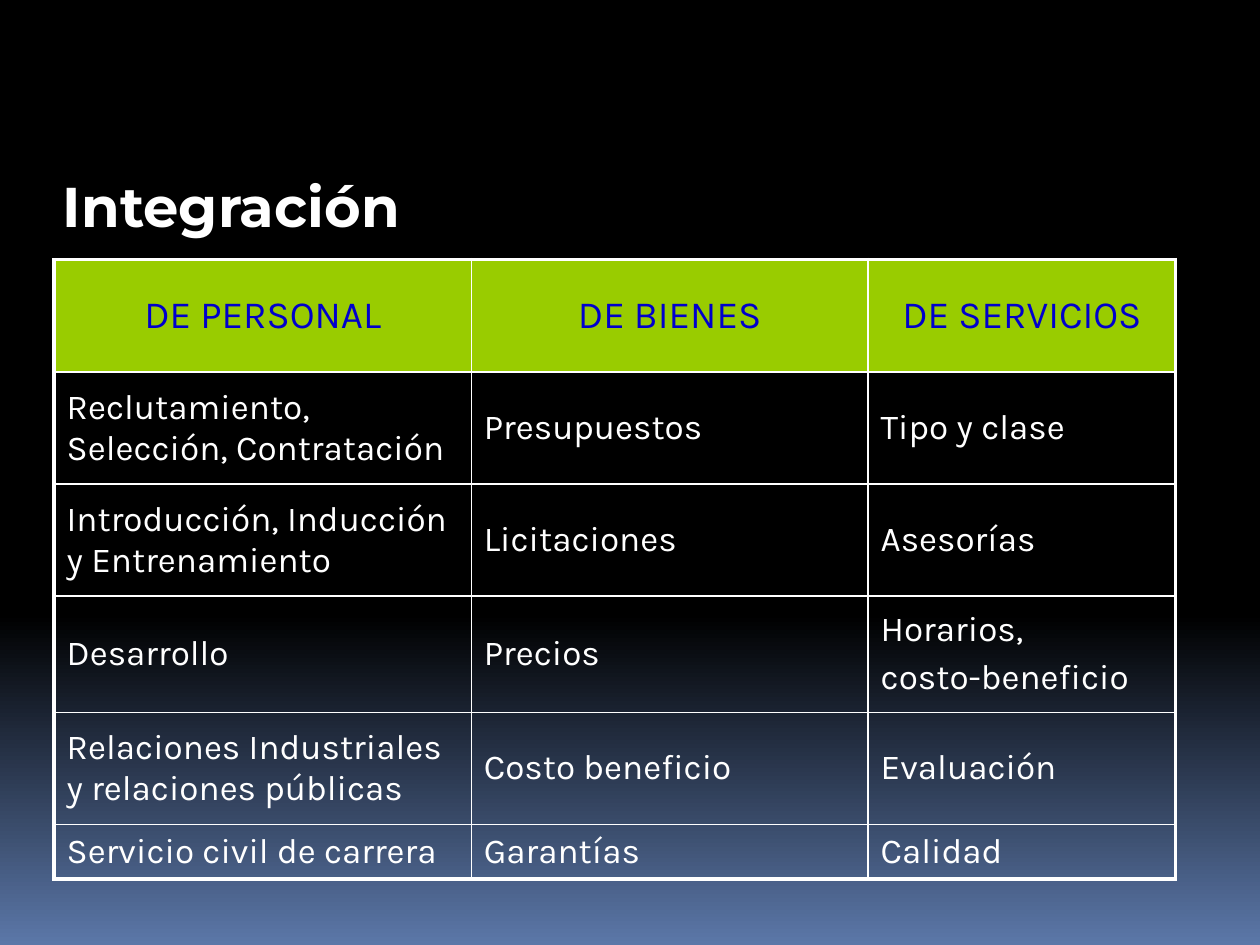
from typing import NamedTuple

from lxml import etree
from pptx import Presentation
from pptx import util as u
from pptx.dml.color import RGBColor
from pptx.enum import text
from pptx.oxml import ns

HUES = {"white": "FFFFFF", "black": "000000", "sky": "5B77A8",
        "lime": "99CC00", "blue": "0000CC"}
THIN, THICK = 1, 2.25
COLS = (8.41, 8, 6.2)
ROWS = (2.27, 2.26, 2.26, 2.34, 2.26, 1.09)
GRID = (
    ("DE PERSONAL", "DE BIENES", "DE SERVICIOS"),
    ("Reclutamiento, Selección, Contratación", "Presupuestos", "Tipo y clase"),
    ("Introducción, Inducción y Entrenamiento", "Licitaciones", "Asesorías"),
    ("Desarrollo", "Precios", "Horarios,\ncosto-beneficio"),
    ("Relaciones Industriales y relaciones públicas", "Costo beneficio",
     "Evaluación"),
    ("Servicio civil de carrera", "Garantías", "Calidad"),
)


class Style(NamedTuple):
    font: dict
    hue: str
    align: text.PP_ALIGN = text.PP_ALIGN.LEFT


TITLE = Style({"name": "Montserrat", "size": u.Pt(32), "bold": True}, "white")
HEAD = Style({"name": "Karla", "size": u.Pt(22), "bold": False}, "blue",
             text.PP_ALIGN.CENTER)
BODY = Style({"name": "Karla", "size": u.Pt(20), "bold": False}, "white")


def rgb(hue: str) -> RGBColor:
    return RGBColor.from_string(HUES[hue])


def write(frame, words: str, style: Style) -> None:
    frame.word_wrap = True
    frame.text = words
    for i, para in enumerate(frame.paragraphs):
        para.alignment = style.align
        if i:
            para.space_before = u.Pt(4)
        font = para.runs[0].font
        for key, value in style.font.items():
            setattr(font, key, value)
        font.color.rgb = rgb(style.hue)


def edge(cell, side: str, width: float) -> None:
    """Add a white border; the sides must come in the order L, R, T, B."""
    props = cell._tc.get_or_add_tcPr()
    line = etree.SubElement(props, ns.qn(f"a:ln{side}"), w=str(u.Pt(width)))
    fill = etree.SubElement(line, ns.qn("a:solidFill"))
    etree.SubElement(fill, ns.qn("a:srgbClr"), val=HUES["white"])


def paint(slide) -> None:
    """Keep the top of the slide black and fade to blue below."""
    fill = slide.background.fill
    fill.gradient()
    fill.gradient_angle = 270
    for stop, (place, hue) in zip(fill.gradient_stops,
                                  ((0.65, "black"), (1, "sky"))):
        stop.position = place
        stop.color.rgb = rgb(hue)


def draw_table(slide) -> None:
    table = slide.shapes.add_table(
        len(ROWS), len(COLS), u.Cm(1.09), u.Cm(5.23),
        u.Cm(sum(COLS)), u.Cm(sum(ROWS))).table
    table.horz_banding = table.first_row = False
    for col, width in zip(table.columns, COLS):
        col.width = u.Cm(width)
    for row, height in zip(table.rows, ROWS):
        row.height = u.Cm(height)
    for r, line in enumerate(GRID):
        for c, words in enumerate(line):
            cell = table.cell(r, c)
            outer = {"L": c == 0, "R": c == len(COLS) - 1,
                     "T": r == 0, "B": r == len(ROWS) - 1}
            for side, thick in outer.items():
                edge(cell, side, THICK if thick else THIN)
            if r == 0:
                cell.fill.solid()
                cell.fill.fore_color.rgb = rgb("lime")
            else:
                cell.fill.background()
            cell.vertical_anchor = text.MSO_ANCHOR.MIDDLE
            write(cell.text_frame, words, BODY if r else HEAD)


def main() -> None:
    deck = Presentation()
    deck.slide_width, deck.slide_height = u.Cm(25.4), u.Cm(19.05)
    slide = deck.slides.add_slide(deck.slide_layouts[6])
    paint(slide)
    box = slide.shapes.add_textbox(u.Cm(1.02), u.Cm(3.33),
                                   u.Cm(19.69), u.Cm(1.6))
    write(box.text_frame, "Integración", TITLE)
    draw_table(slide)
    deck.save("out.pptx")


if __name__ == "__main__":
    main()
